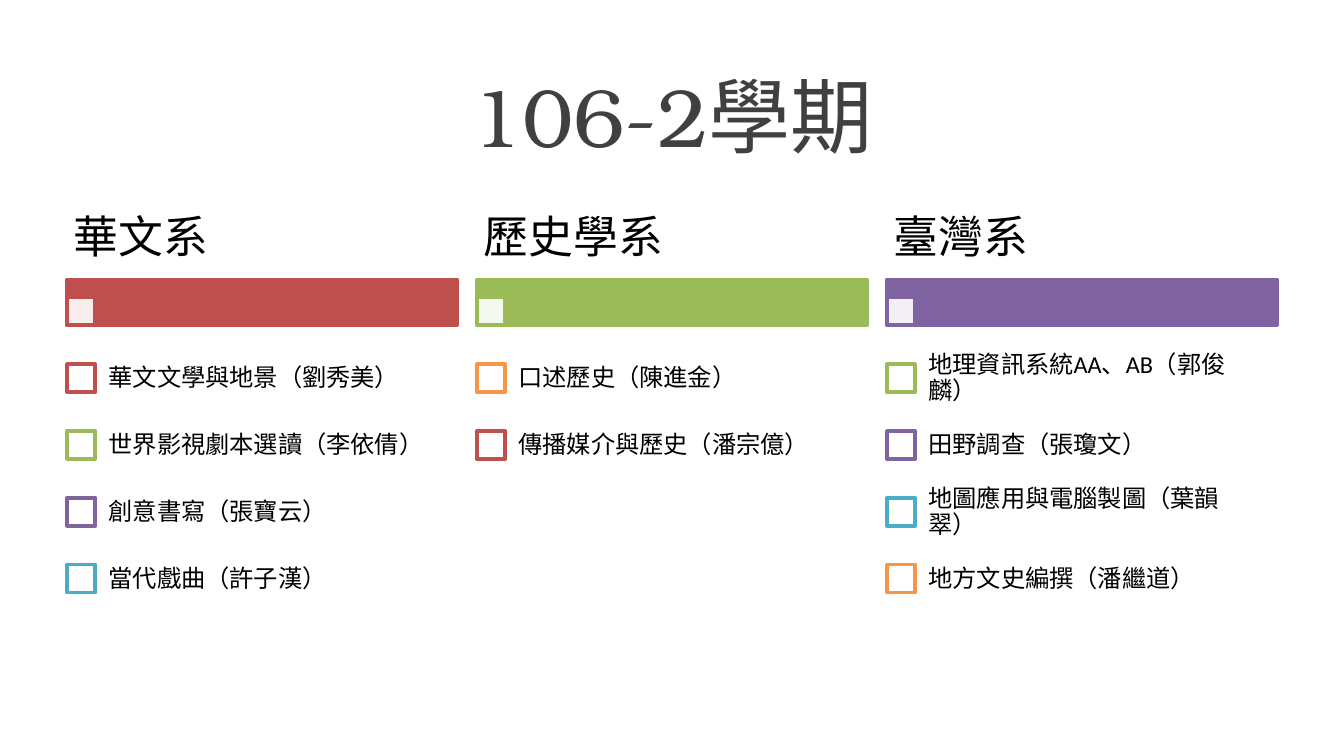
import itertools

import pptx
import pptx.dml.color
import pptx.enum.shapes
import pptx.enum.text
import pptx.oxml
import pptx.oxml.ns
import pptx.util

Inches = pptx.util.Inches
Pt = pptx.util.Pt
Align = pptx.enum.text.PP_ALIGN

# Content: each department with its bar colour and courses
TITLE = "106-2學期"
DEPTS = [
    ("華文系", "C0504D", ["華文文學與地景（劉秀美）", "世界影視劇本選讀（李依倩）",
                       "創意書寫（張寶云）", "當代戲曲（許子漢）"]),
    ("歷史學系", "9BBB59", ["口述歷史（陳進金）", "傳播媒介與歷史（潘宗億）"]),
    ("臺灣系", "8064A2", ["地理資訊系統AA、AB（郭俊麟）", "田野調查（張瓊文）",
                       "地圖應用與電腦製圖（葉韻翠）", "地方文史編撰（潘繼道）"]),
]
ACCENTS = ["C0504D", "9BBB59", "8064A2", "4BACC6", "F79646"]

# Layout in inches
LEFT, STEP, WIDTH = 0.5, 3.05, 2.9
ROW_TOP, ROW = 2.57, 1.49 / 3
BOX = 0.21

# A 16:9 slide
deck = pptx.Presentation()
deck.slide_width = Inches(10)
deck.slide_height = Inches(10 * 9 / 16)
slide = deck.slides.add_slide(deck.slide_layouts[6])


def color(code):
    return pptx.dml.color.RGBColor.from_string(code)


def add_rect(x, y, w, h, fill, line):
    rect = slide.shapes.add_shape(
        pptx.enum.shapes.MSO_SHAPE.RECTANGLE,
        Inches(x), Inches(y), Inches(w), Inches(h))
    rect.shadow.inherit = False
    rect.fill.solid()
    rect.fill.fore_color.rgb = color(fill)
    rect.line.color.rgb = color(line)
    rect.line.width = Pt(2)
    return rect


def add_text(x, y, w, h, text, size, font="Calibri", ink="000000",
             pad=(0.1, 0.1), align=Align.LEFT, lead=0.9):
    box = slide.shapes.add_textbox(Inches(x), Inches(y), Inches(w), Inches(h))
    frame = box.text_frame
    frame.word_wrap = True
    frame.vertical_anchor = pptx.enum.text.MSO_ANCHOR.MIDDLE
    frame.margin_left = frame.margin_right = Inches(pad[0])
    frame.margin_top = frame.margin_bottom = Inches(pad[1])
    para = frame.paragraphs[0]
    para.alignment = align
    para.line_spacing = lead
    run = para.add_run()
    run.text = text
    run.font.size = Pt(size)
    run.font.name = font
    run.font.color.rgb = color(ink)


def set_alpha(shape, percent):
    rgb = shape.fill._xPr.find(".//" + pptx.oxml.ns.qn("a:srgbClr"))
    alpha = pptx.oxml.parse_xml(
        f'<a:alpha {pptx.oxml.ns.nsdecls("a")} val="{percent * 1000}"/>')
    rgb.append(alpha)


# Title
add_text(0.5, 0.38, 9, 0.94, TITLE, 44, "TeX Gyre Bonum", "404040",
         (0.1, 0.05), Align.CENTER, 1.0)

# Department columns; the course colours run on from one to the next
hues = itertools.cycle(ACCENTS)
for col, (dept, hue, courses) in enumerate(DEPTS):
    x = LEFT + col * STEP
    add_rect(x, 2.08, WIDTH, 0.34, hue, hue)
    set_alpha(add_rect(x, 2.21, BOX, BOX, "FFFFFF", hue), 90)
    add_text(x, 1.47, WIDTH, 0.61, dept, 24, pad=(0.05, 0.03))

    for row, course in enumerate(courses):
        y = ROW_TOP + row * ROW
        add_rect(x, y + 0.14, BOX, BOX, "FFFFFF", next(hues))
        add_text(x + BOX, y, WIDTH - BOX, 0.5, course, 13)

deck.save("out.pptx")
